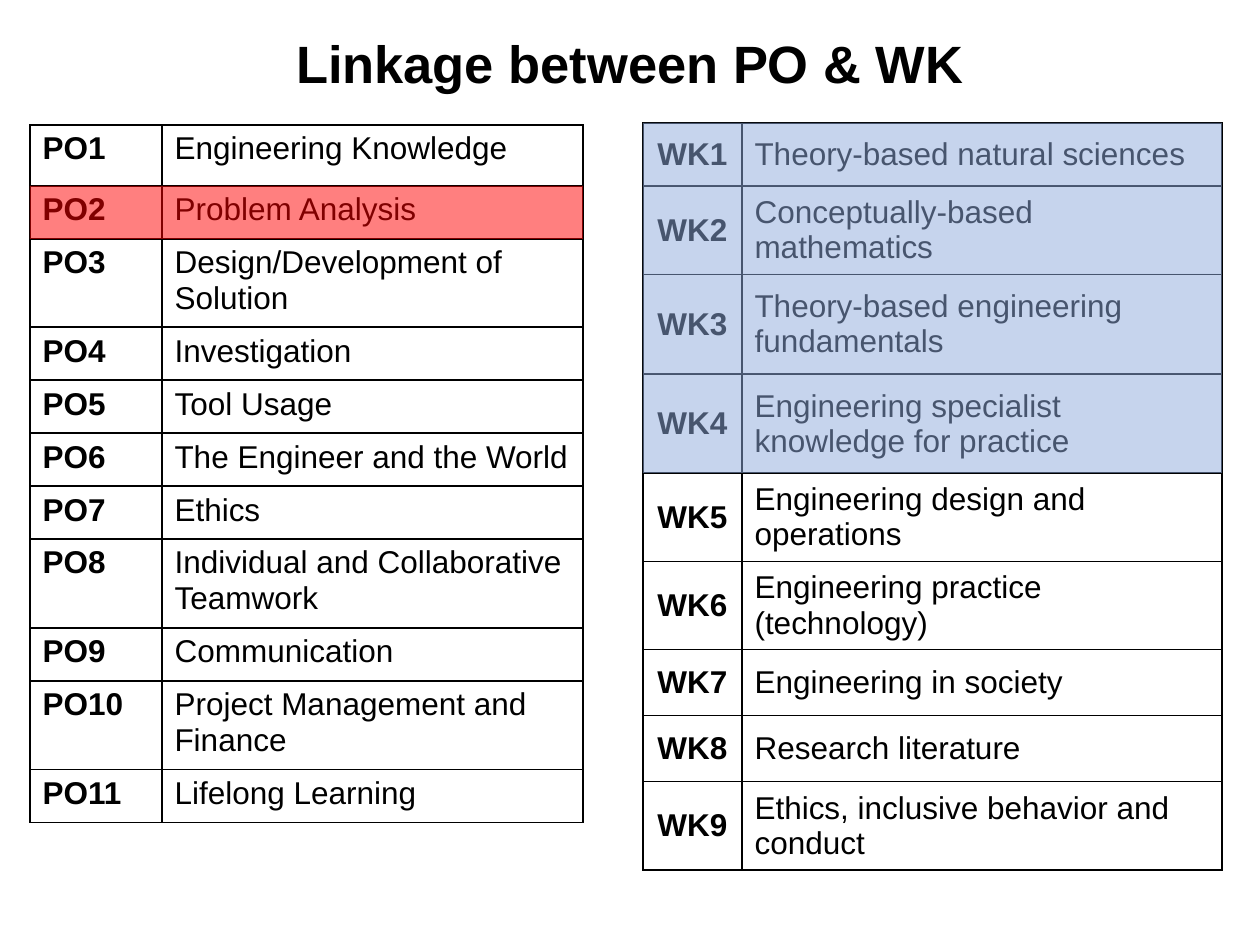
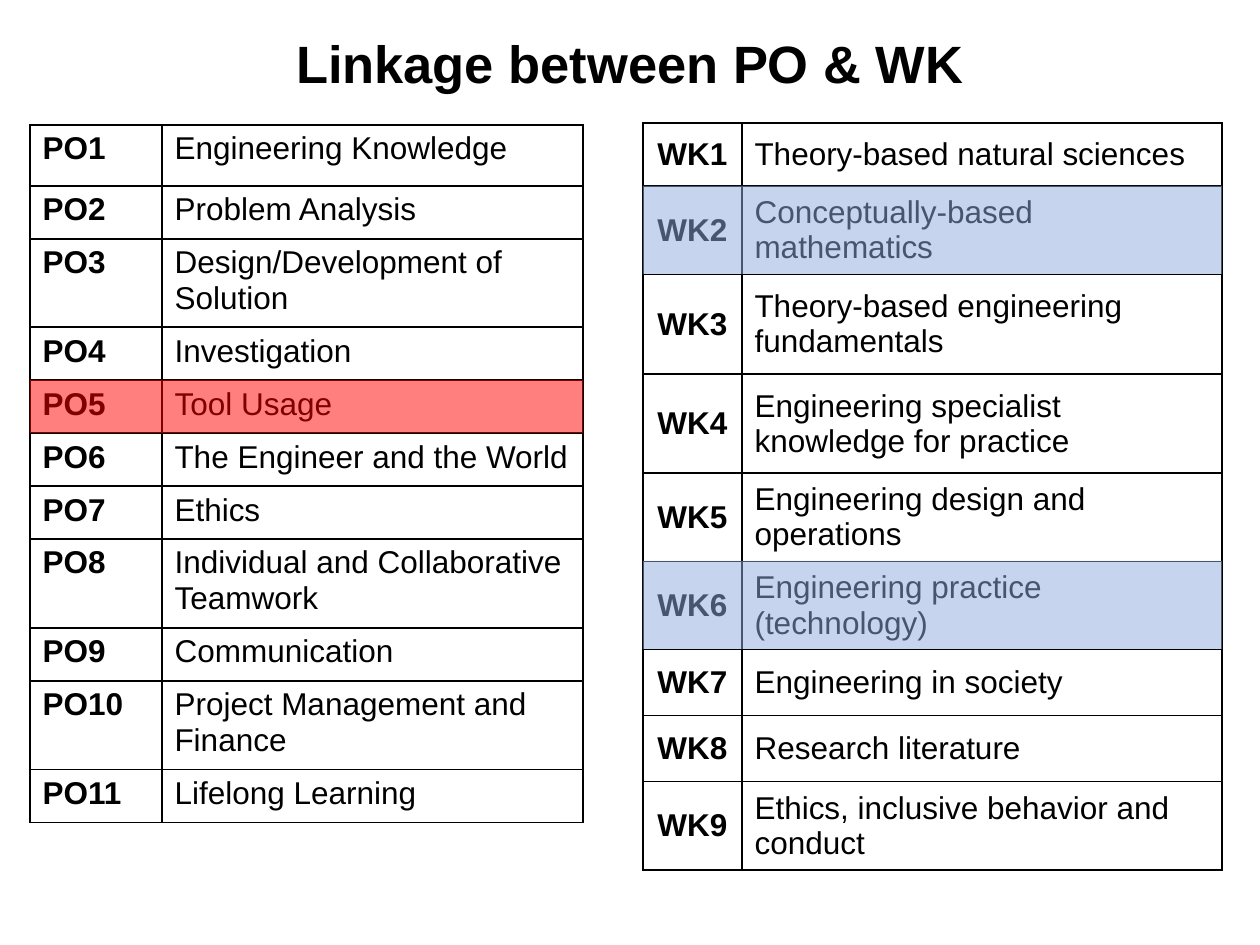
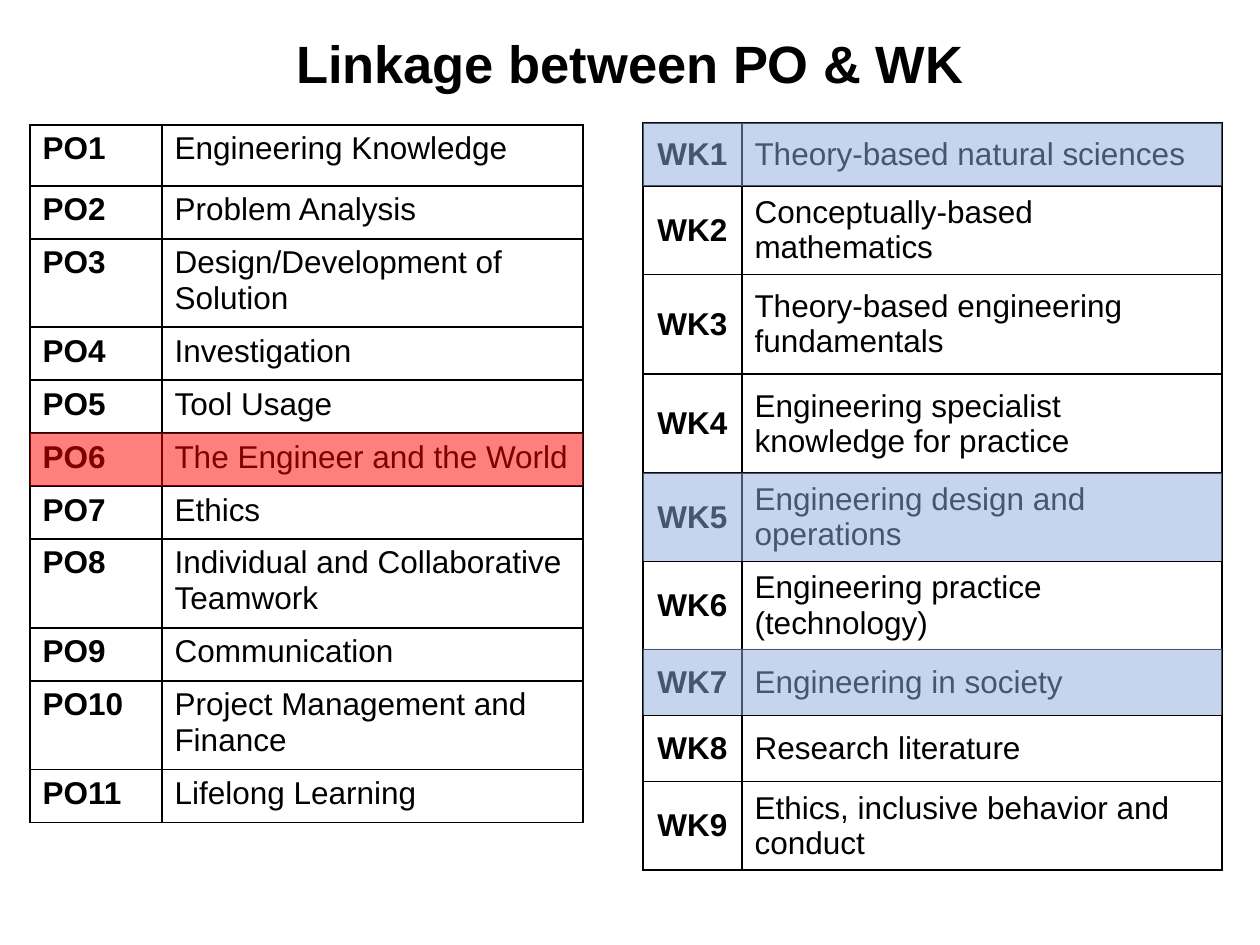
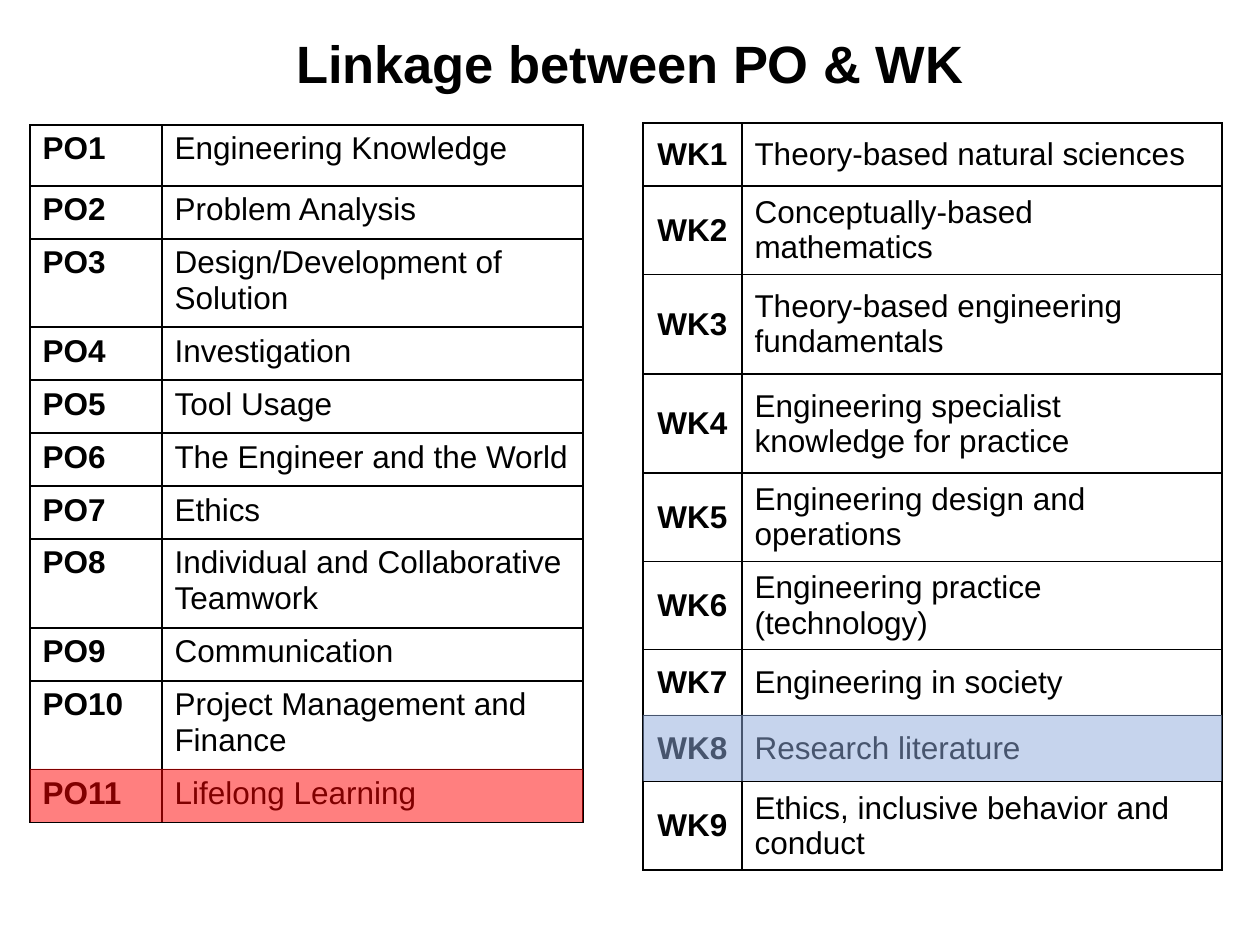
from dataclasses import dataclass
from lxml import etree
from pptx import Presentation, util as u
from pptx.dml.color import RGBColor
from pptx.enum import shapes, text
from pptx.oxml.ns import qn

TITLE = "Linkage between PO & WK"
OUTCOMES = {
    "prefix": "PO",
    "left": 30, "top": 125, "columns": (132, 421),
    "align": text.PP_ALIGN.LEFT, "anchor": text.MSO_ANCHOR.TOP,
    "highlight": "FF0000",
    "rows": [
        ("Engineering Knowledge", 61),
        ("Problem Analysis", 53),
        ("Design/Development of Solution", 88),
        ("Investigation", 53),
        ("Tool Usage", 53),
        ("The Engineer and the World", 53),
        ("Ethics", 53),
        ("Individual and Collaborative Teamwork", 89),
        ("Communication", 53),
        ("Project Management and Finance", 88),
        ("Lifelong Learning", 53),
    ],
}
KNOWLEDGE = {
    "prefix": "WK",
    "left": 643, "top": 123, "columns": (99, 480),
    "align": text.PP_ALIGN.CENTER, "anchor": text.MSO_ANCHOR.MIDDLE,
    "highlight": "8FAADC",
    "rows": [
        ("Theory-based natural sciences", 63),
        ("Conceptually-based mathematics", 88),
        ("Theory-based engineering fundamentals", 100),
        ("Engineering specialist knowledge for practice", 99),
        ("Engineering design and operations", 88),
        ("Engineering practice (technology)", 88),
        ("Engineering in society", 66),
        ("Research literature", 66),
        ("Ethics, inclusive behavior and conduct", 88),
    ],
}
LINKS = [
    (2, (1, 2, 3, 4)),
    (5, (2, 6)),
    (6, (1, 5, 7)),
    (11, (8,)),
]


@dataclass(frozen=True)
class Theme:
    font: str = "Arial"
    ink: str = "000000"
    title_size: int = 30
    body_size: int = 18
    border: int = 1
    opacity: int = 50


THEME = Theme()


def px(length):
    return u.Emu(round(length * 914400 / 126))


def write(frame, words, size, bold, align):
    para = frame.paragraphs[0]
    para.alignment = align
    span = para.add_run()
    span.text = words
    span.font.name = THEME.font
    span.font.size = u.Pt(size)
    span.font.bold = bold
    span.font.color.rgb = RGBColor.from_string(THEME.ink)


def add_title(page):
    box = page.shapes.title
    box.left, box.top, box.width, box.height = px(0), px(25), px(1260), px(77)
    frame = box.text_frame
    frame.word_wrap = True
    frame.auto_size = text.MSO_AUTO_SIZE.SHAPE_TO_FIT_TEXT
    frame.vertical_anchor = text.MSO_ANCHOR.TOP
    write(frame, TITLE, THEME.title_size, True, text.PP_ALIGN.CENTER)


def add_borders(cell):
    properties = cell._tc.get_or_add_tcPr()
    for position, side in enumerate(("lnL", "lnR", "lnT", "lnB")):
        line = etree.Element(qn(f"a:{side}"), w=str(u.Pt(THEME.border)))
        fill = etree.SubElement(line, qn("a:solidFill"))
        etree.SubElement(fill, qn("a:srgbClr"), val=THEME.ink)
        properties.insert(position, line)


def add_list(page, group):
    rows, columns = group["rows"], group["columns"]
    heights = [height for _, height in rows]
    table = page.shapes.add_table(
        len(rows), len(columns), px(group["left"]), px(group["top"]),
        px(sum(columns)), px(sum(heights))).table
    table.first_row = table.horz_banding = False
    for column, width in zip(table.columns, columns):
        column.width = px(width)
    for number, (name, height) in enumerate(rows, 1):
        row = table.rows[number - 1]
        row.height = px(height)
        entries = (
            (f"{group['prefix']}{number}", True, group["align"]),
            (name, False, text.PP_ALIGN.LEFT),
        )
        for cell, (words, bold, align) in zip(row.cells, entries):
            cell.fill.background()
            cell.vertical_anchor = group["anchor"]
            write(cell.text_frame, words, THEME.body_size, bold, align)
            add_borders(cell)


def add_highlight(page, group, number):
    heights = [height for _, height in group["rows"]]
    top = group["top"] + sum(heights[:number - 1])
    box = page.shapes.add_shape(
        shapes.MSO_SHAPE.RECTANGLE, px(group["left"]), px(top),
        px(sum(group["columns"])), px(heights[number - 1]))
    box.shadow.inherit = False
    box.line.fill.background()
    box.fill.solid()
    box.fill.fore_color.rgb = RGBColor.from_string(group["highlight"])
    color = box._element.spPr.find(qn("a:solidFill"))[0]
    etree.SubElement(color, qn("a:alpha"), val=str(THEME.opacity * 1000))


def main():
    deck = Presentation()
    deck.slide_width, deck.slide_height = px(1260), px(945)
    title_only = deck.slide_layouts[5]
    for outcome, knowledge in LINKS:
        page = deck.slides.add_slide(title_only)
        add_title(page)
        add_list(page, OUTCOMES)
        add_list(page, KNOWLEDGE)
        add_highlight(page, OUTCOMES, outcome)
        for number in knowledge:
            add_highlight(page, KNOWLEDGE, number)
    deck.save("out.pptx")


if __name__ == "__main__":
    main()
